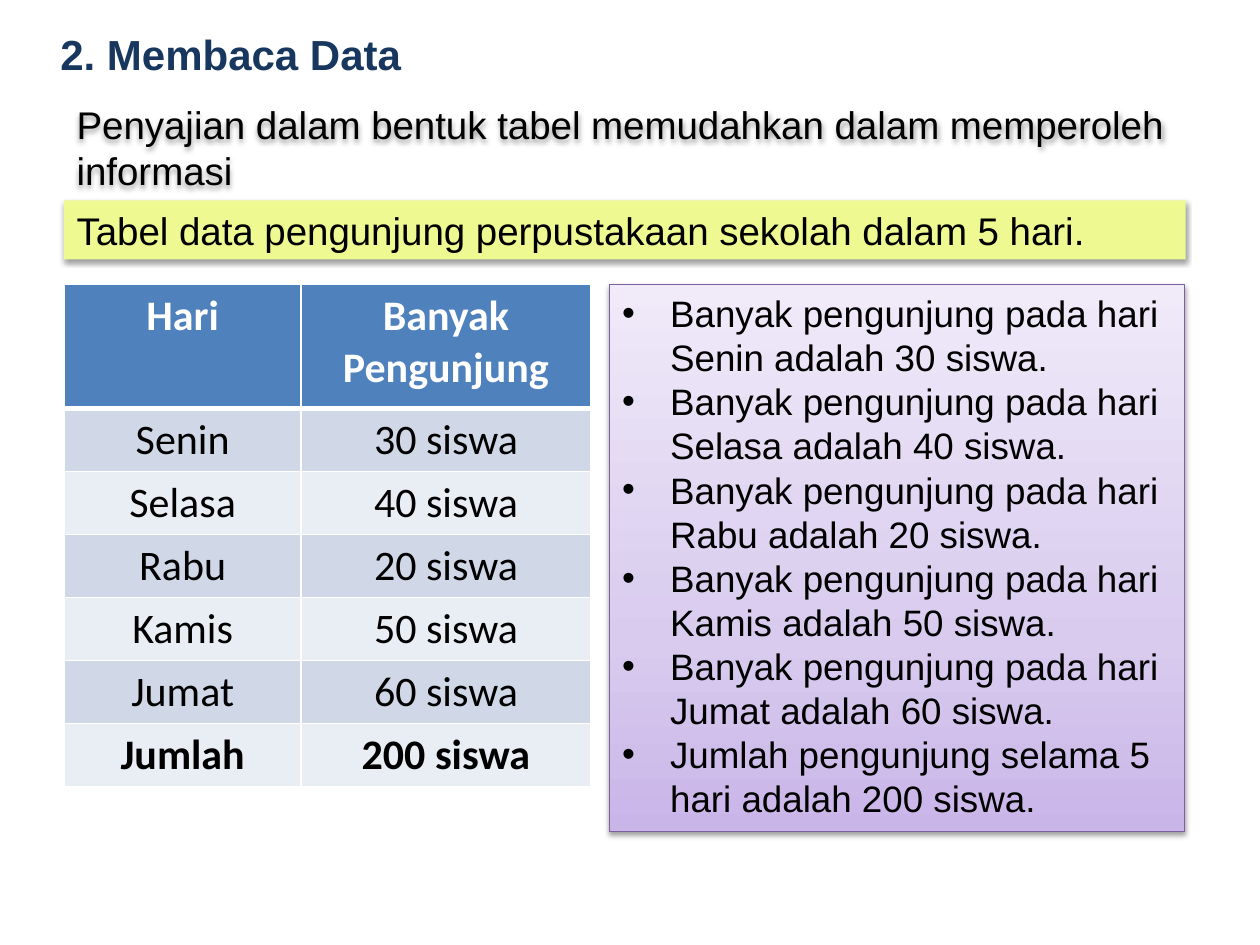
import copy
import dataclasses

import lxml.etree
import pptx
import pptx.dml.color
import pptx.enum.shapes
import pptx.enum.text
import pptx.oxml
import pptx.oxml.ns
import pptx.util
from pptx.util import Inches


@dataclasses.dataclass(frozen=True)
class Theme:
    heading: str = "17375E"
    black: str = "000000"
    white: str = "FFFFFF"
    banner: str = "EFF991"
    header: str = "4F81BD"
    bands: tuple = ("D0D8E8", "E9EDF4")
    panel_line: str = "7D60A0"
    panel_stops: tuple = ((0, "C9B5E8"), (0.35, "D8CBEE"), (1, "F0EAF9"))
    body_font: str = "Arial"
    table_font: str = "Calibri"
    large: int = 24
    medium: int = 22
    small: int = 21


theme = Theme()
rgb = pptx.dml.color.RGBColor.from_string
qn = pptx.oxml.ns.qn
namespace = 'xmlns:a="http://schemas.openxmlformats.org/drawingml/2006/main"'


def write(frame, lines, size, font=theme.body_font, color=theme.black, bold=False,
          align=pptx.enum.text.PP_ALIGN.LEFT, wrap=True, margin=0, bullet=False):
    frame.word_wrap = wrap
    frame.vertical_anchor = pptx.enum.text.MSO_ANCHOR.TOP
    for index, line in enumerate(lines):
        para = frame.paragraphs[0] if index == 0 else frame.add_paragraph()
        para.alignment = align
        properties = para._p.get_or_add_pPr()
        properties.set("marL", str(Inches(margin)))
        if bullet:
            properties.set("indent", str(-Inches(margin)))
            lxml.etree.SubElement(properties, qn("a:buFont"), typeface="Arial")
            lxml.etree.SubElement(properties, qn("a:buChar"), char="•")
        span = para.add_run()
        span.text = line
        span.font.name = font
        span.font.size = pptx.util.Pt(size)
        span.font.bold = bold
        span.font.color.rgb = rgb(color)


def add_shadow(shape):
    shape.shadow.inherit = False
    shape._element.spPr.find(qn("a:effectLst")).append(pptx.oxml.parse_xml(
        f'<a:outerShdw {namespace} blurRad="40000" dist="20000" dir="5400000" '
        f'rotWithShape="0"><a:srgbClr val="{theme.black}"><a:alpha val="38000"/>'
        '</a:srgbClr></a:outerShdw>'))


deck = pptx.Presentation()
deck.slide_width = Inches(10)
deck.slide_height = Inches(7.5)
page = deck.slides.add_slide(deck.slide_layouts[6])
rectangle = pptx.enum.shapes.MSO_SHAPE.RECTANGLE
left = Inches(0.51)
content_top = Inches(2.26)

visits = [("Senin", 30), ("Selasa", 40), ("Rabu", 20), ("Kamis", 50), ("Jumat", 60)]
total = sum(count for day, count in visits)

# Heading
title = page.shapes.add_textbox(Inches(0.2), Inches(0.18), Inches(3.12), Inches(0.5))
write(title.text_frame, ["2. Membaca Data"], theme.large, color=theme.heading,
      bold=True, wrap=False, margin=0.18)

# Reading of the table
panel = page.shapes.add_shape(rectangle, Inches(4.84), content_top, Inches(4.56), Inches(4.34))
panel.fill.gradient()
panel.fill.gradient_angle = 90
first_stop = panel._element.spPr.find(".//" + qn("a:gs"))
first_stop.addnext(copy.deepcopy(first_stop))
for stop, (position, color) in zip(panel.fill.gradient_stops, theme.panel_stops):
    stop.position = position
    stop.color.rgb = rgb(color)
panel.line.color.rgb = rgb(theme.panel_line)
panel.line.width = pptx.util.Pt(0.75)
add_shadow(panel)
findings = [f"Banyak pengunjung pada hari {day} adalah {count} siswa." for day, count in visits]
findings.append(f"Jumlah pengunjung selama 5 hari adalah {total} siswa.")
write(panel.text_frame, findings, theme.small, margin=0.38, bullet=True)

# Table caption
banner = page.shapes.add_shape(rectangle, left, Inches(1.59), Inches(8.9), Inches(0.47))
banner.fill.solid()
banner.fill.fore_color.rgb = rgb(theme.banner)
banner.line.fill.background()
add_shadow(banner)
write(banner.text_frame, ["Tabel data pengunjung perpustakaan sekolah dalam 5 hari."],
      theme.medium)

# Visitor table
rows = [("Hari", "Banyak Pengunjung")]
rows += [(day, f"{count} siswa") for day, count in visits + [("Jumlah", total)]]
table = page.shapes.add_table(len(rows), 2, left, content_top,
                              Inches(4.18), Inches(3.98)).table
table.columns[0].width = Inches(1.88)
table.columns[1].width = Inches(2.3)
for row_index, values in enumerate(rows):
    is_header = row_index == 0
    table.rows[row_index].height = Inches(0.98 if is_header else 0.5)
    for column_index, value in enumerate(values):
        cell = table.cell(row_index, column_index)
        for side in "LRTB":
            thick = (row_index, side) in ((0, "B"), (1, "T"))
            cell._tc.get_or_add_tcPr().append(pptx.oxml.parse_xml(
                f'<a:ln{side} {namespace} w="{pptx.util.Pt(3 if thick else 1)}"><a:solidFill>'
                f'<a:srgbClr val="{theme.white}"/></a:solidFill></a:ln{side}>'))
        cell.fill.solid()
        cell.fill.fore_color.rgb = rgb(
            theme.header if is_header else theme.bands[(row_index - 1) % 2])
        write(cell.text_frame, [value], theme.large, font=theme.table_font,
              color=theme.white if is_header else theme.black,
              bold=row_index in (0, len(rows) - 1),
              align=pptx.enum.text.PP_ALIGN.CENTER)

# Introduction
intro = page.shapes.add_textbox(left, Inches(0.75), Inches(9.13), Inches(0.84))
add_shadow(intro)
write(intro.text_frame,
      ["Penyajian dalam bentuk tabel memudahkan dalam memperoleh informasi"], theme.medium)

deck.save("out.pptx")
